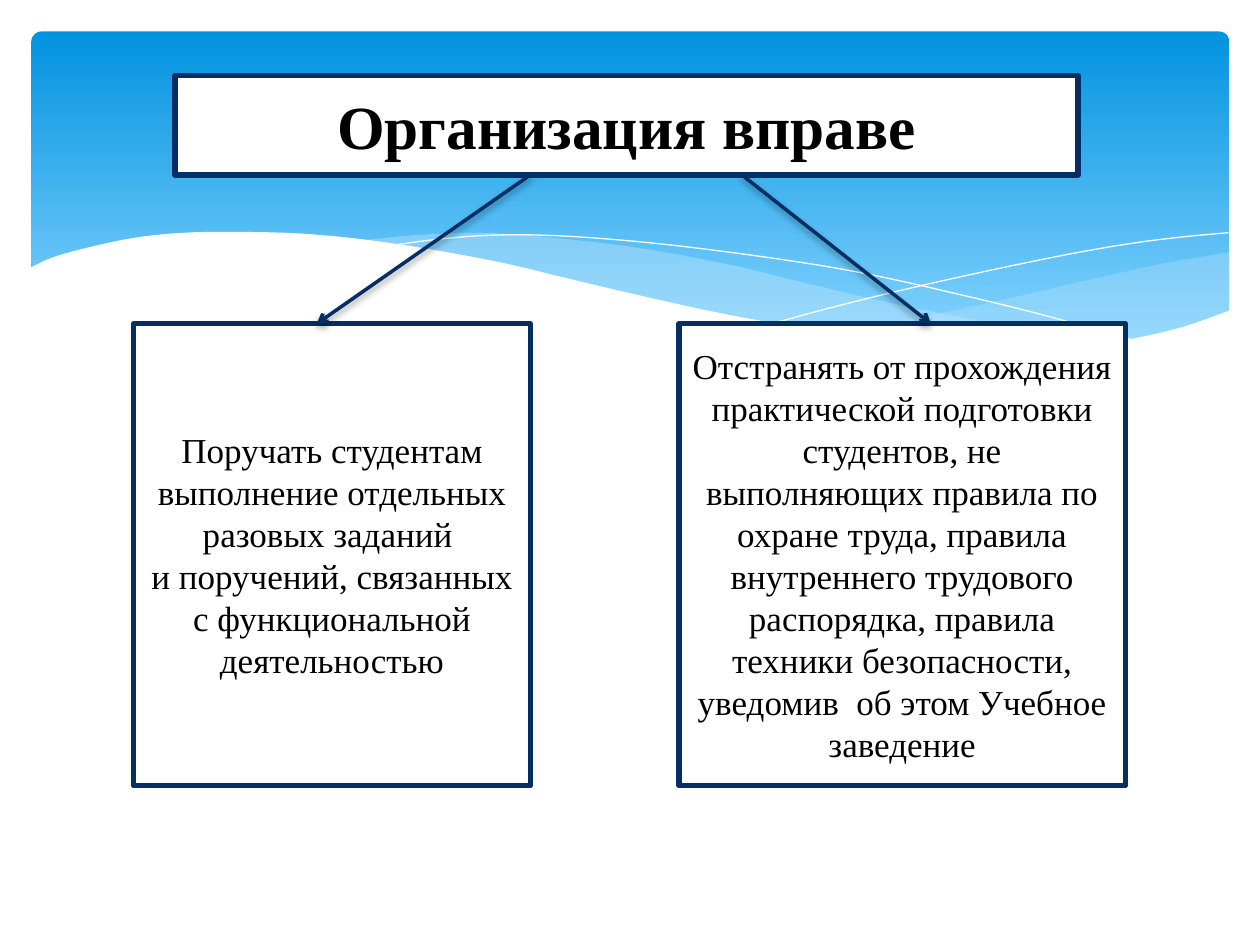
from dataclasses import dataclass

from lxml import etree
from pptx import Presentation
from pptx.dml.color import RGBColor
from pptx.enum import shapes, text
from pptx.oxml import ns
from pptx.util import Pt


@dataclass(frozen=True)
class Theme:
    sky_top: str = "0293E0"
    sky_bottom: str = "83D3FE"
    mist: str = "C6E7FC"
    white: str = "FFFFFF"
    navy: str = "052E65"
    black: str = "000000"
    font: str = "Times New Roman"
    title_size: int = 35
    body_size: int = 20


THEME = Theme()

# Wave edges, as points that the curves pass through
RIGHT_MIST = [
    [(703, 144), (663, 151), (620, 160.5), (561, 174), (508, 185), (476, 191)],
    [(476, 191), (508, 195), (545, 198.5), (578, 200), (615, 198.5),
     (652, 193.5), (678, 186.5), (703, 178)],
]
MIDDLE_MIST = [
    [(206, 137.5), (236, 134.5), (274, 133), (318, 136), (370, 142.5),
     (420.5, 152), (453, 160), (508, 173), (558, 183), (603, 191), (643, 196.5)],
    [(643, 196.5), (617, 199.5), (581, 200), (539, 198.5), (490, 193),
     (433, 183.5), (382, 173), (323, 160), (276, 149), (233, 141), (206, 137.5)],
]
FALLING_LINE = [
    (222.5, 140.5), (248, 137), (279, 134.5), (312, 134.5), (352, 137), (400, 142),
    (458, 150), (500, 157.5), (547, 168), (598, 180.5), (653, 196)]
RISING_LINE = [
    (441, 185), (484, 173.5), (538.5, 160.5), (602, 147), (644, 139.5),
    (675, 135.5), (702, 133)]
WHITE_WAVE = [
    (703.5, 177), (677, 186.5), (647, 193.5), (612, 198), (582.5, 199.5),
    (536, 197.5), (481, 191), (417, 180), (362, 168), (322, 158.5), (281.5, 149),
    (227.5, 139.5), (180, 134), (139, 132.5), (105, 133), (76, 136), (48, 142),
    (29, 147.5), (16.5, 153.5)]
WHITE_BASE = [(16.5, 237), (703.5, 237)]


def rgb(value):
    return RGBColor.from_string(value)


def sub(parent, tag, **attrs):
    return etree.SubElement(parent, ns.qn(tag), attrs)


def smooth(points, steps=5):
    """Sample a Catmull-Rom curve through the points."""
    ends = [points[0], *points, points[-1]]
    curve = [points[0]]
    for a, b, c, d in zip(ends, ends[1:], ends[2:], ends[3:]):
        for i in range(1, steps + 1):
            t = i / steps
            curve.append(tuple(
                0.5 * (2 * q + (r - p) * t + (2 * p - 5 * q + 4 * r - s) * t ** 2
                       + (3 * q - p - 3 * r + s) * t ** 3)
                for p, q, r, s in zip(a, b, c, d)))
    return curve


def add_freeform(slide, points, fill=None, opacity=100, line=None):
    start, *rest = [(Pt(x), Pt(y)) for x, y in points]
    builder = slide.shapes.build_freeform(*start, scale=1.0)
    builder.add_line_segments(rest, close=fill is not None)
    sp = builder.convert_to_shape()
    sp.shadow.inherit = False
    if fill:
        sp.fill.solid()
        sp.fill.fore_color.rgb = rgb(fill)
        if opacity < 100:
            color = sp.fill._xPr.find(".//" + ns.qn("a:srgbClr"))
            sub(color, "a:alpha", val=str(opacity * 1000))
    else:
        sp.fill.background()
    if line:
        sp.line.color.rgb = rgb(line)
        sp.line.width = Pt(0)
    else:
        sp.line.fill.background()


def add_sky(slide):
    sp = slide.shapes.add_shape(
        shapes.MSO_SHAPE.ROUNDED_RECTANGLE, Pt(18), Pt(18), Pt(684.5), Pt(194.5))
    sp.adjustments[0] = 0.03
    sp.shadow.inherit = False
    sp.line.fill.background()
    sp.fill.gradient()
    sp.fill.gradient_angle = 270
    stops = [(0, THEME.sky_top), (0.9, THEME.sky_bottom)]
    for stop, (position, color) in zip(sp.fill.gradient_stops, stops):
        stop.position = position
        stop.color.rgb = rgb(color)


def add_box(slide, left, top, width, height, lines, size, bold=False):
    sp = slide.shapes.add_shape(
        shapes.MSO_SHAPE.RECTANGLE, Pt(left), Pt(top), Pt(width), Pt(height))
    sp.shadow.inherit = False
    sp.fill.solid()
    sp.fill.fore_color.rgb = rgb(THEME.white)
    sp.line.color.rgb = rgb(THEME.navy)
    sp.line.width = Pt(3)
    tf = sp.text_frame
    tf.word_wrap = True
    tf.vertical_anchor = text.MSO_ANCHOR.MIDDLE
    p = tf.paragraphs[0]
    p.alignment = text.PP_ALIGN.CENTER
    for i, words in enumerate(lines):
        if i:
            p.add_line_break()
        r = p.add_run()
        r.text = words
        r.font.name = THEME.font
        r.font.size = Pt(size)
        r.font.bold = bold
        r.font.color.rgb = rgb(THEME.black)


def add_arrow(slide, x1, y1, x2, y2):
    line = slide.shapes.add_connector(
        shapes.MSO_CONNECTOR.STRAIGHT, Pt(x1), Pt(y1), Pt(x2), Pt(y2))
    line.line.color.rgb = rgb(THEME.navy)
    line.line.width = Pt(2)
    sub(line.line._get_or_add_ln(), "a:tailEnd", type="arrow")
    # Soft shadow straight below the line
    effects = sub(line._element.spPr, "a:effectLst")
    shadow = sub(effects, "a:outerShdw", blurRad=str(Pt(4)), dist=str(Pt(2)),
                 dir="5400000", rotWithShape="0")
    color = sub(shadow, "a:srgbClr", val=THEME.black)
    sub(color, "a:alpha", val="38000")


def add_background(slide):
    add_sky(slide)
    for edges, opacity in ((RIGHT_MIST, 29), (MIDDLE_MIST, 40)):
        outline = [point for edge in edges for point in smooth(edge)]
        add_freeform(slide, outline, THEME.mist, opacity)
    for curve in (FALLING_LINE, RISING_LINE):
        add_freeform(slide, smooth(curve), line=THEME.white)
    add_freeform(slide, smooth(WHITE_WAVE) + WHITE_BASE, THEME.white)


def main():
    prs = Presentation()
    prs.slide_width, prs.slide_height = Pt(720), Pt(540)
    slide = prs.slides.add_slide(prs.slide_layouts[6])
    add_background(slide)

    # The two rights
    box_top, box_height = 185, 264
    add_box(slide, 76.5, box_top, 226.5, box_height, [
        "Поручать студентам выполнение отдельных разовых заданий ",
        "и поручений, связанных с функциональной деятельностью",
    ], THEME.body_size)
    add_box(slide, 388, box_top, 255, box_height, [
        "Отстранять от прохождения практической подготовки студентов, "
        "не выполняющих правила по охране труда, правила внутреннего "
        "трудового распорядка, правила техники безопасности, "
        "уведомив  об этом Учебное заведение",
    ], THEME.body_size)

    # Arrows from the heading, then the heading over them
    title_top, title_height = 43, 57
    for x1, x2 in ((303, 181), (424, 532)):
        add_arrow(slide, x1, title_top + title_height, x2, box_top)
    add_box(slide, 100, title_top, 516, title_height, ["Организация вправе"],
            THEME.title_size, bold=True)

    prs.save("out.pptx")


if __name__ == "__main__":
    main()
